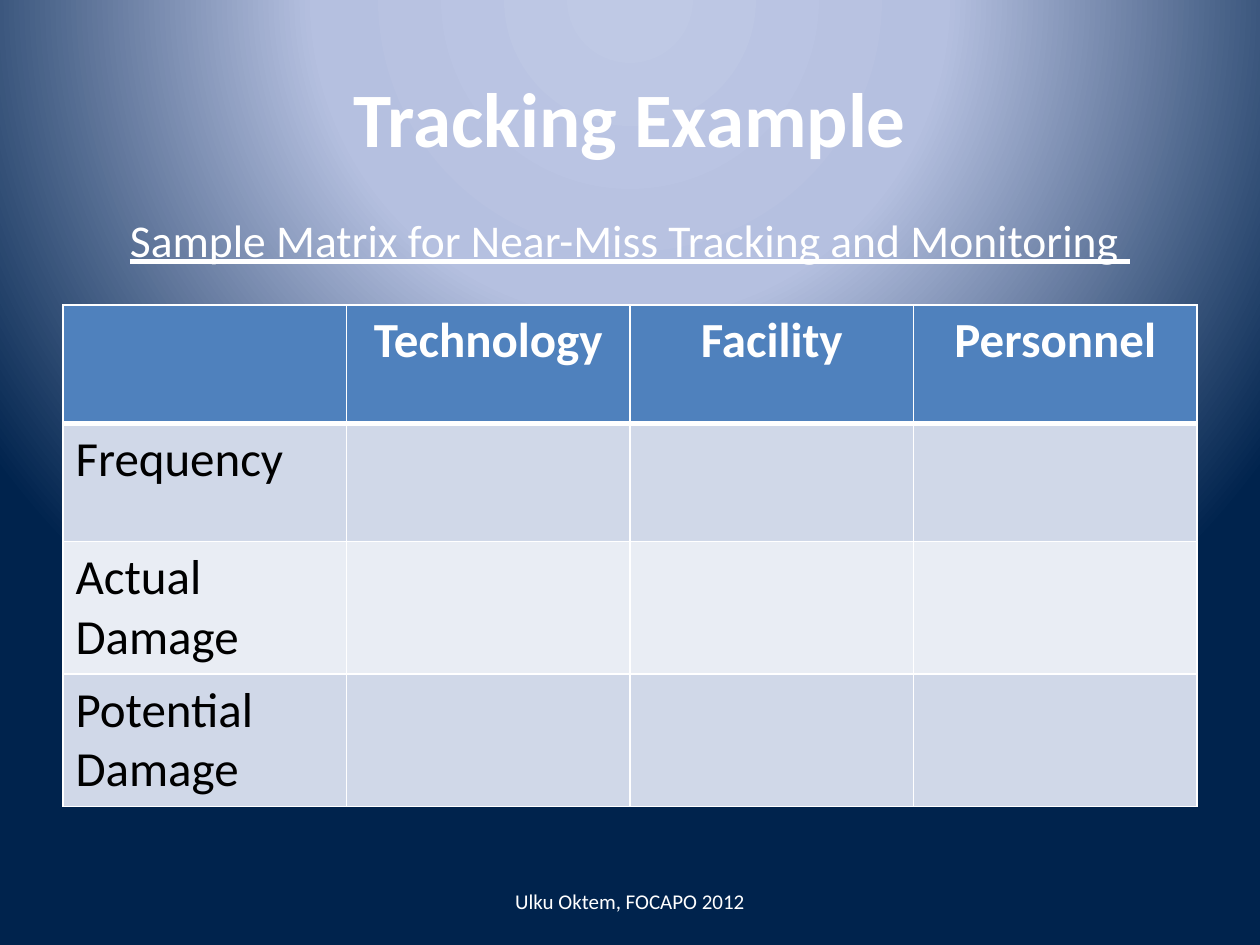
from pptx import Presentation
from pptx.dml.color import RGBColor
from pptx.enum.text import MSO_ANCHOR as Anchor, PP_ALIGN as Align
from pptx.oxml import parse_xml
from pptx.oxml.ns import nsdecls
from pptx.util import Inches, Pt

WHITE = RGBColor(0xFF, 0xFF, 0xFF)
BLACK = RGBColor(0, 0, 0)
HEADER_BLUE = RGBColor(0x4F, 0x81, 0xBD)
BANDS = [RGBColor(0xD0, 0xD8, 0xE8), RGBColor(0xE9, 0xED, 0xF4)]
GLOW = [(0, RGBColor(0xBF, 0xC9, 0xE5)), (40, RGBColor(0xB5, 0xC0, 0xE0)),
        (100, RGBColor(0x00, 0x23, 0x4D))]

TITLE = "Tracking Example"
SUBTITLE = "Sample Matrix for Near-Miss Tracking and Monitoring "
FOOTER = "Ulku Oktem, FOCAPO 2012"
HEADINGS = ["", "Technology", "Facility", "Personnel"]
MEASURES = [["Frequency"], ["Actual Damage"], ["Potential", " ", "Damage"]]

WIDTH, HEIGHT = 10, 7.5
MARGIN = 0.5
TABLE_TOP, ROW_HEIGHT = 2.42, 0.94
TITLE_FORMAT = {"size": Pt(44), "bold": True}
SUBTITLE_FORMAT = {"size": Pt(26), "underline": True}
FOOTER_FORMAT = {"size": Pt(12)}
HEADING_FORMAT = {"size": Pt(28), "bold": True}
MEASURE_FORMAT = {"size": Pt(28), "bold": False}


def write(frame, texts, formats, color=WHITE, align=Align.CENTER):
    """Fill the first paragraph with runs of one format."""
    para = frame.paragraphs[0]
    para.alignment = align
    for text in texts:
        span = para.add_run()
        span.text = text
        for name, value in {"name": "Calibri", **formats}.items():
            setattr(span.font, name, value)
        span.font.color.rgb = color
        if text == " ":
            span.font.size = Pt(18)


def place(box, left, top, width, height, anchor):
    """Position a text shape and set its frame."""
    box.left, box.top, box.width, box.height = map(Inches, (left, top, width, height))
    box.text_frame.word_wrap = True
    box.text_frame.vertical_anchor = anchor
    return box.text_frame


def paint_background(page):
    """Give the page a radial gradient centred above its top edge."""
    stops = "".join(f'<a:gs pos="{share * 1000}"><a:srgbClr val="{color}"/></a:gs>'
                    for share, color in GLOW)
    page.background.fill.solid()
    properties = page.background._cSld.bg.bgPr
    properties.replace(properties[0], parse_xml(
        f'<a:gradFill {nsdecls("a")} rotWithShape="1"><a:gsLst>{stops}</a:gsLst>'
        '<a:path path="circle"><a:fillToRect l="50000" t="-80000" r="50000" b="180000"/>'
        '</a:path></a:gradFill>'))


def style_cell(cell, row, fill):
    """Draw white borders, thick under the header, and fill the cell."""
    widths = {"L": 1, "R": 1, "T": 3 if row == 1 else 1, "B": 3 if row == 0 else 1}
    properties = cell._tc.get_or_add_tcPr()
    for side, width in widths.items():
        properties.append(parse_xml(
            f'<a:ln{side} {nsdecls("a")} w="{Pt(width)}"><a:solidFill>'
            f'<a:srgbClr val="{WHITE}"/></a:solidFill></a:ln{side}>'))
    cell.fill.solid()
    cell.fill.fore_color.rgb = fill


def add_matrix(page):
    """Add the table of measures against areas."""
    rows, columns = len(MEASURES) + 1, len(HEADINGS)
    table = page.shapes.add_table(
        rows, columns, Inches(MARGIN), Inches(TABLE_TOP),
        Inches(WIDTH - 2 * MARGIN), Inches(rows * ROW_HEIGHT)).table
    for row in range(rows):
        fill = BANDS[(row - 1) % 2] if row else HEADER_BLUE
        for column in range(columns):
            style_cell(table.cell(row, column), row, fill)
    for column, heading in enumerate(HEADINGS):
        if heading:
            write(table.cell(0, column).text_frame, [heading], HEADING_FORMAT)
    for row, texts in enumerate(MEASURES, 1):
        write(table.cell(row, 0).text_frame, texts, MEASURE_FORMAT, BLACK, Align.LEFT)


def main():
    """Build the tracking matrix slide."""
    deck = Presentation()
    deck.slide_width, deck.slide_height = Inches(WIDTH), Inches(HEIGHT)
    page = deck.slides.add_slide(deck.slide_layouts[5])
    paint_background(page)
    title = place(page.shapes.title, MARGIN, 0.3, WIDTH - 2 * MARGIN, 1.25, Anchor.MIDDLE)
    write(title, [TITLE], TITLE_FORMAT)
    add_matrix(page)
    for text, formats, top, width, height, anchor in [
            (FOOTER, FOOTER_FORMAT, 6.95, 3.17, 0.4, Anchor.MIDDLE),
            (SUBTITLE, SUBTITLE_FORMAT, 1.63, 8.5, 0.54, Anchor.TOP)]:
        box = page.shapes.add_textbox(0, 0, 0, 0)
        frame = place(box, (WIDTH - width) / 2, top, width, height, anchor)
        write(frame, [text], formats)
    deck.save("out.pptx")


if __name__ == "__main__":
    main()
